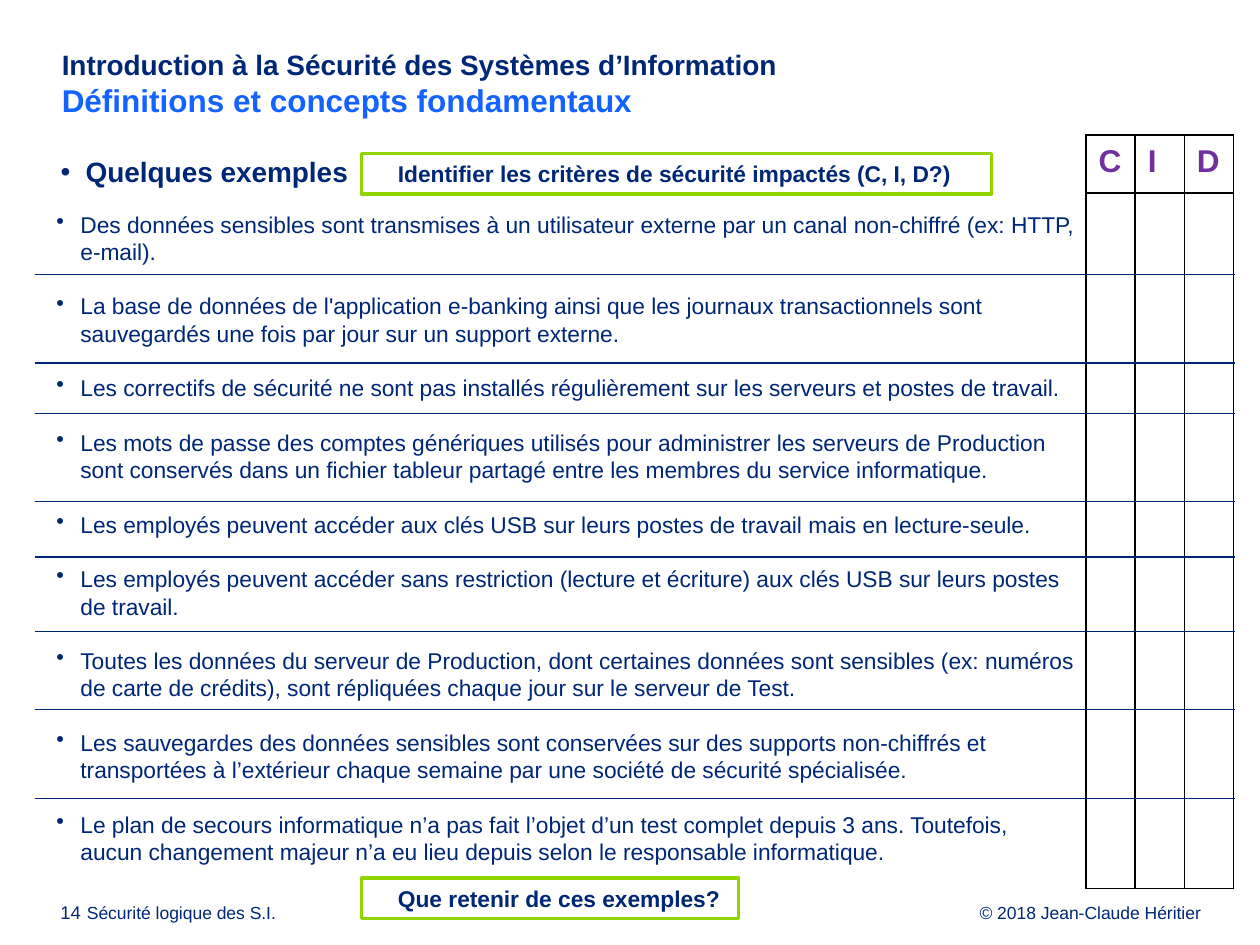
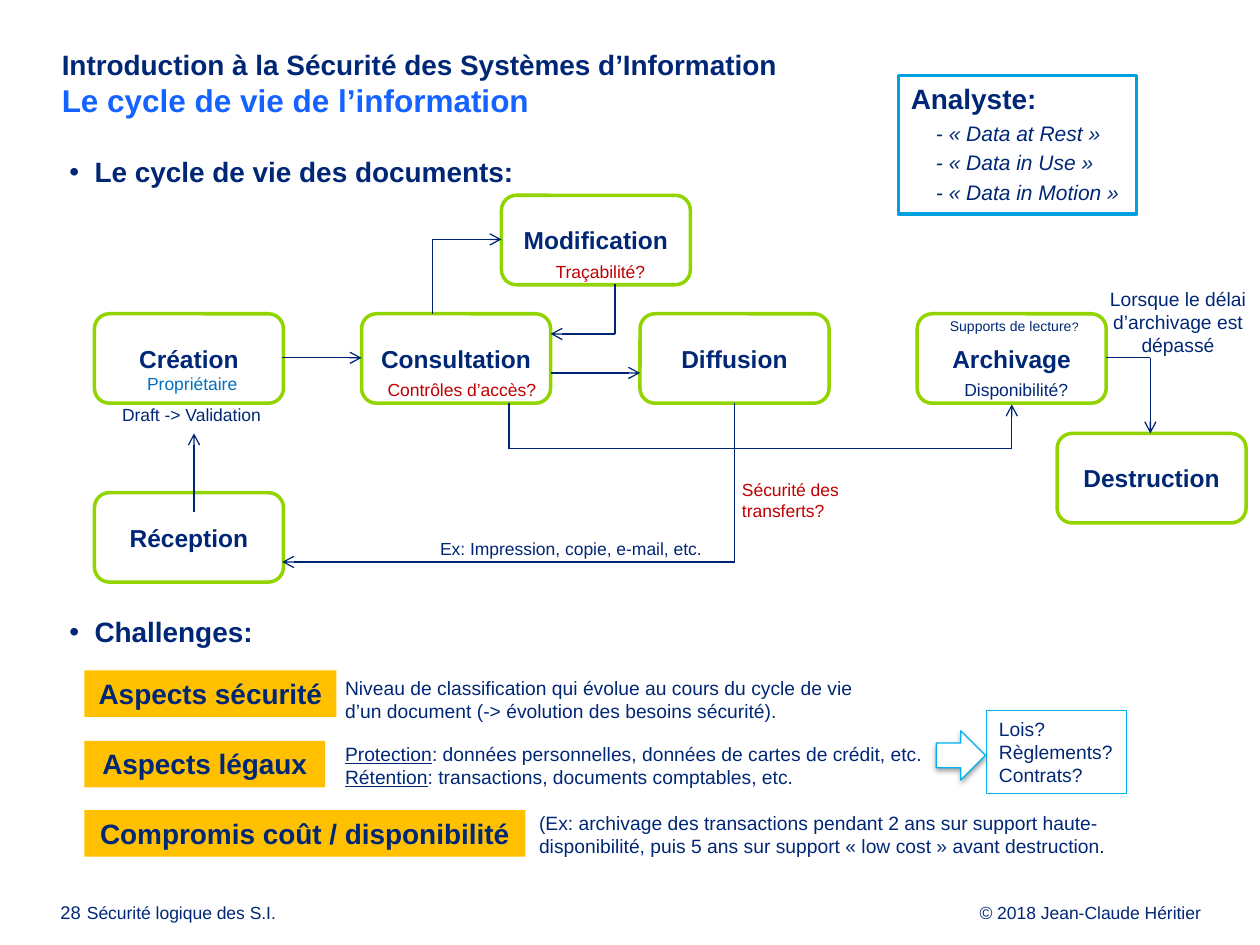
from dataclasses import dataclass, replace
from itertools import pairwise
from typing import NamedTuple

from lxml import etree
from pptx import Presentation
from pptx.dml.color import RGBColor
from pptx.enum.shapes import MSO_CONNECTOR, MSO_SHAPE
from pptx.enum.text import MSO_ANCHOR, MSO_AUTO_SIZE, PP_ALIGN
from pptx.oxml.ns import qn
from pptx.util import Emu, Inches, Pt

LEFT, MID, RIGHT = PP_ALIGN.LEFT, PP_ALIGN.CENTER, PP_ALIGN.RIGHT
TOP, CENTER = MSO_ANCHOR.TOP, MSO_ANCHOR.MIDDLE
RECT, ROUND, ARROW = MSO_SHAPE.RECTANGLE, MSO_SHAPE.ROUNDED_RECTANGLE, MSO_SHAPE.RIGHT_ARROW
STRAIGHT = MSO_CONNECTOR.STRAIGHT
FIXED = MSO_AUTO_SIZE.NONE


@dataclass(frozen=True)
class Theme:
    font: str = "Arial"
    navy: str = "002776"
    rule: str = "002673"
    blue: str = "1462FF"
    green: str = "92D400"
    cyan: str = "00A1DE"
    sky: str = "00B0F0"
    azure: str = "0070C0"
    gold: str = "FFC000"
    red: str = "C00000"
    violet: str = "7030A0"
    white: str = "FFFFFF"
    black: str = "000000"
    big: float = 18
    head: float = 16
    node: float = 14
    item: float = 13
    quote: float = 12
    note: float = 11
    page: float = 10.5
    small: float = 10
    tiny: float = 8
    mark: float = 7
    lead: float = 1.2


T = Theme()


@dataclass(frozen=True)
class Style:
    size: float
    color: str = T.navy
    bold: bool = False
    italic: bool = False
    align: PP_ALIGN = LEFT
    after: float = 0
    left: float = 0
    hang: float = 0
    lead: float = 0
    under: bool = False


class Box(NamedTuple):
    x: float
    y: float
    w: float
    h: float


class Label(NamedTuple):
    text: str
    box: Box
    style: Style
    wrap: bool = True


class Node(NamedTuple):
    text: str
    x: float
    y: float


HEAD = Style(T.head, bold=True, hang=0.2)
ITEM = Style(T.item, hang=0.19, after=15.6)
BADGE = Style(T.item, bold=True, left=0.19)
NODE = Style(T.node, bold=True, align=MID)
TAG = Style(T.head, bold=True, align=MID)
NOTE = Style(T.note)
SMALL = Style(T.small)
HINT = replace(SMALL, align=MID)
RISK = replace(HINT, color=T.red)
FOOT = replace(SMALL, lead=10.8)
TINY = Style(T.tiny)
QUOTE = Style(T.quote, italic=True, left=0.2, after=2.7)


def rgb(code: str) -> RGBColor:
    return RGBColor.from_string(code)


def place(shape, box: Box) -> None:
    shape.left, shape.top, shape.width, shape.height = map(Inches, box)


def ink(run, style: Style) -> None:
    font = run.font
    font.name, font.size = T.font, Pt(style.size)
    font.bold, font.italic = style.bold, style.italic
    font.color.rgb = rgb(style.color)


def dress(para, style: Style) -> None:
    para.alignment = style.align
    para.line_spacing = Pt(style.lead or style.size * T.lead)
    para.space_before, para.space_after = Pt(0), Pt(style.after)
    props = para._p.get_or_add_pPr()
    props.set("marL", str(Inches(style.left + style.hang)))
    props.set("indent", str(-Inches(style.hang)))
    if style.hang:
        etree.SubElement(props, qn("a:buChar")).set("char", "•")
    for run in para.runs:
        ink(run, style)


def put(frame, text: str, style: Style, wrap: bool = True, anchor=TOP) -> None:
    frame.text = text
    frame.word_wrap, frame.auto_size = wrap, FIXED
    frame.vertical_anchor = anchor
    for para in frame.paragraphs:
        if style.under:
            key, colon, rest = para.text.partition(":")
            para.text = key
            para.add_run().text = colon + rest
            para.runs[0].font.underline = True
        dress(para, style)


def trim(frame, left: float = 0) -> None:
    frame.margin_left = Inches(left)
    frame.margin_top = frame.margin_right = frame.margin_bottom = 0


def write(slide, label: Label):
    shape = slide.shapes.add_textbox(*map(Inches, label.box))
    put(shape.text_frame, label.text, label.style, label.wrap)
    return shape


def block(slide, label: Label, fill: str = "", line: str = "", width: float = 2,
          kind=RECT, anchor=TOP):
    shape = slide.shapes.add_shape(kind, *map(Inches, label.box))
    shape.shadow.inherit = False
    if fill:
        shape.fill.solid()
        shape.fill.fore_color.rgb = rgb(fill)
    else:
        shape.fill.background()
    if line:
        shape.line.color.rgb = rgb(line)
        shape.line.width = Pt(width)
    else:
        shape.line.fill.background()
    if label.text:
        put(shape.text_frame, label.text, label.style, label.wrap, anchor)
    return shape


def route(slide, *stops: tuple[float, float], tip: bool = True) -> None:
    for start, end in pairwise(stops):
        link = slide.shapes.add_connector(STRAIGHT, *map(Inches, start + end))
        link.line.color.rgb, link.line.width = rgb(T.rule), Pt(0.75)
        etree.SubElement(link._element.spPr, qn("a:effectLst"))
    if tip:
        tail = etree.SubElement(link.line._get_or_add_ln(), qn("a:tailEnd"))
        tail.set("type", "arrow")


def shade(shape) -> None:
    glow = etree.SubElement(shape._element.spPr.find(qn("a:effectLst")), qn("a:outerShdw"))
    for key, value in (("blurRad", Pt(3.1)), ("dist", Pt(1.6)), ("dir", 5400000), ("rotWithShape", 0)):
        glow.set(key, str(int(value)))
    tint = etree.SubElement(glow, qn("a:srgbClr"))
    tint.set("val", T.black)
    etree.SubElement(tint, qn("a:alpha")).set("val", "38000")


def edge(cell) -> None:
    props = cell._tc.get_or_add_tcPr()
    for spot, side in enumerate(("lnL", "lnR", "lnT", "lnB")):
        line = etree.Element(qn(f"a:{side}"), w=str(Pt(1)))
        fill = etree.SubElement(line, qn("a:solidFill"))
        etree.SubElement(fill, qn("a:srgbClr")).set("val", T.black)
        props.insert(spot, line)


def start(deck, topic: str, page: str, heads: str, box: Box, gap: float = 0):
    slide = deck.slides.add_slide(deck.slide_layouts[1])
    title, body = slide.placeholders
    place(title, Box(0.45, 0.38, 9.21, 0.69))
    put(title.text_frame, f"Introduction à la Sécurité des Systèmes d’Information\n{topic}",
        Style(T.head, bold=True))
    dress(title.text_frame.paragraphs[1], Style(T.big, T.blue, True))
    place(body, box)
    put(body.text_frame, heads, replace(HEAD, after=gap))
    for shape in (title, body):
        trim(shape.text_frame, 0.04)
    for text, x, w, style in (
        ("© 2018 Jean-Claude Héritier", 7, 2.53, replace(FOOT, align=RIGHT)),
        ("Sécurité logique des S.I.", 0.69, 2.53, FOOT),
        (page, 0.48, 0.26, replace(FOOT, size=T.page)),
    ):
        trim(write(slide, Label(text, Box(x, 7.18, w, 0.16), style)).text_frame)
    return slide


def cases(deck) -> None:
    slide = start(deck, "Définitions et concepts fondamentaux", "14",
                  "Quelques exemples", Box(0.44, 1.23, 9.21, 0.35))
    items = (
        "Des données sensibles sont transmises à un utilisateur externe par un canal non-chiffré (ex: HTTP, e-mail).",
        "La base de données de l'application e-banking ainsi que les journaux transactionnels sont sauvegardés une fois par jour sur un support externe.",
        "Les correctifs de sécurité ne sont pas installés régulièrement sur les serveurs et postes de travail.",
        "Les mots de passe des comptes génériques utilisés pour administrer les serveurs de Production sont conservés dans un fichier tableur partagé entre les membres du service informatique.",
        "Les employés peuvent accéder aux clés USB sur leurs postes de travail mais en lecture-seule.",
        "Les employés peuvent accéder sans restriction (lecture et écriture) aux clés USB sur leurs postes de travail.",
        "Toutes les données du serveur de Production, dont certaines données sont sensibles (ex: numéros de carte de crédits), sont répliquées chaque jour sur le serveur de Test.",
        "Les sauvegardes des données sensibles sont conservées sur des supports non-chiffrés et transportées à l’extérieur chaque semaine par une société de sécurité spécialisée.",
        "Le plan de secours informatique n’a pas fait l’objet d’un test complet depuis 3 ans. Toutefois, aucun changement majeur n’a eu lieu depuis selon le responsable informatique.",
    )
    write(slide, Label("\n".join(items), Box(0.35, 1.62, 8.27, 5.35), ITEM))
    for text, y, w in (("Identifier les critères de sécurité impactés (C, I, D?)", 1.22, 5),
                       ("Que retenir de ces exemples?", 6.97, 2.99)):
        block(slide, Label(text, Box(2.87, y, w, 0.32), BADGE), T.white, T.green)
    grid = slide.shapes.add_table(2, 3, *map(Inches, Box(8.62, 1.07, 1.17, 5.98))).table
    for row, high in zip(grid.rows, (0.46, 5.52)):
        row.height = Inches(high)
    for cell in grid.iter_cells():
        cell.fill.solid()
        cell.fill.fore_color.rgb = rgb(T.white)
        edge(cell)
    for col, text in enumerate("CID"):
        cell = grid.cell(0, col)
        cell.text = text
        dress(cell.text_frame.paragraphs[0], Style(T.big, T.violet, True))
    for y in (2.18, 2.88, 3.28, 3.98, 4.42, 5.01, 5.63, 6.34):
        route(slide, (0.28, y), (9.8, y), tip=False)


def cycle(deck) -> None:
    slide = start(deck, "Le cycle de vie de l’information", "28",
                  "Le cycle de vie des documents:\nChallenges:", Box(0.51, 1.23, 9.2, 5.67), 243.7)
    for text, x, y in (
        Node("Création", 0.75, 2.49), Node("Consultation", 2.87, 2.49),
        Node("Modification", 3.98, 1.55), Node("Diffusion", 5.08, 2.49),
        Node("Archivage", 7.28, 2.49), Node("Destruction", 8.39, 3.44),
        Node("Réception", 0.75, 3.91),
    ):
        block(slide, Label(text, Box(x, y, 1.5, 0.71), NODE), T.white, T.green,
              kind=ROUND, anchor=CENTER)
    for stops in (
        ((3.43, 2.49), (3.43, 1.9), (3.98, 1.9)),
        ((4.88, 2.25), (4.88, 2.65), (4.37, 2.65)),
        ((4.37, 2.96), (5.08, 2.96)),
        ((1.54, 4.06), (1.54, 3.44)),
        ((4.04, 3.2), (4.04, 3.56), (8.03, 3.56), (8.03, 3.21)),
        ((8.78, 2.84), (9.13, 2.84), (9.13, 3.44)),
        ((5.83, 3.2), (5.83, 4.46), (2.24, 4.46)),
        ((2.24, 2.84), (2.87, 2.84)),
    ):
        route(slide, *stops)
    panel = block(slide, Label("Analyste:\n- «\u00a0Data at Rest\u00a0»\n- «\u00a0Data in Use\u00a0»\n- «\u00a0Data in Motion\u00a0»",
                               Box(7.13, 0.6, 1.89, 1.1), QUOTE), T.white, T.cyan)
    dress(panel.text_frame.paragraphs[0], Style(T.head, bold=True, after=2.7))
    for text, y, w in (("Aspects sécurité", 5.32, 2), ("Aspects légaux", 5.88, 1.91),
                       ("Compromis coût / disponibilité", 6.43, 3.5)):
        block(slide, Label(text, Box(0.67, y, w, 0.37), TAG, False), T.gold)
    for label in (
        Label("Draft -> Validation", Box(0.87, 3.16, 1.32, 0.27), SMALL, False),
        Label("Lorsque le délai d’archivage est dépassé", Box(8.7, 2.23, 1.3, 0.66), replace(NOTE, align=MID)),
        Label("Niveau de classification qui évolue au cours du cycle de vie d’un document (-> évolution des besoins sécurité).",
              Box(2.64, 5.32, 4.41, 0.47), NOTE),
        Label("Ex: Impression, copie, e-mail, etc.", Box(3.19, 4.22, 2.68, 0.27), HINT),
        Label("Protection: données personnelles, données de cartes de crédit, etc.\nRétention: transactions, documents comptables, etc.",
              Box(2.64, 5.84, 4.96, 0.47), replace(NOTE, under=True)),
        Label("(Ex: archivage des transactions pendant 2 ans sur support haute-disponibilité, puis 5 ans sur support «\u00a0low cost\u00a0» avant destruction.",
              Box(4.18, 6.39, 4.96, 0.47), NOTE),
        Label("Traçabilité?", Box(4.06, 2.02, 1.41, 0.27), RISK),
        Label("Sécurité des transferts?", Box(5.79, 3.75, 1.02, 0.44), replace(RISK, align=LEFT)),
        Label("Contrôles d’accès?", Box(2.96, 2.96, 1.41, 0.27), RISK),
        Label("Disponibilité?", Box(7.36, 2.96, 1.41, 0.27), HINT),
        Label("Propriétaire", Box(0.82, 2.91, 1.41, 0.27), replace(HINT, color=T.azure)),
    ):
        write(slide, label)
    media = write(slide, Label("Supports de lecture", Box(7.44, 2.47, 1.24, 0.24), TINY, False))
    mark = media.text_frame.paragraphs[0].add_run()
    mark.text = "?"
    ink(mark, replace(TINY, size=T.mark))
    block(slide, Label("Lois?\nRèglements?\nContrats?", Box(7.83, 5.64, 1.11, 0.66), NOTE, False),
          line=T.sky, width=0.75)
    shade(block(slide, Label("", Box(7.43, 5.8, 0.39, 0.39), NOTE), T.white, T.sky, 0.75, ARROW))


def main() -> None:
    deck = Presentation()
    deck.slide_width, deck.slide_height = Emu(Inches(10)), Emu(Inches(7.5))
    cases(deck)
    cycle(deck)
    deck.save("out.pptx")


if __name__ == "__main__":
    main()
